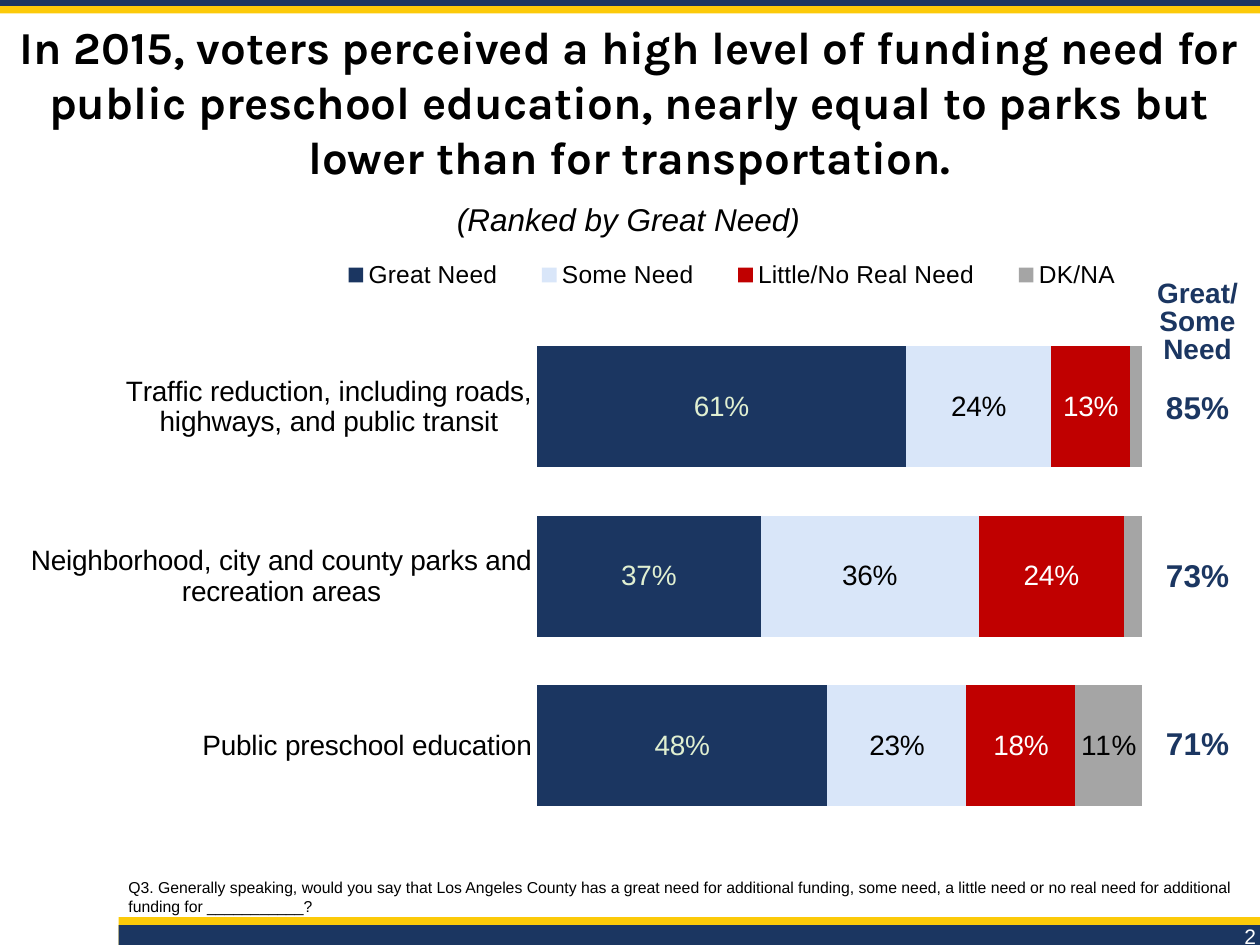
import pptx
import pptx.chart.data
import pptx.dml.color
import pptx.enum.chart
import pptx.enum.shapes
import pptx.enum.text
import pptx.oxml
import pptx.oxml.ns
import pptx.util

Cm, Pt = pptx.util.Cm, pptx.util.Pt
RGB = pptx.dml.color.RGBColor
Anchor = pptx.enum.text.MSO_ANCHOR
Align = pptx.enum.text.PP_ALIGN
XL = pptx.enum.chart

NAVY = RGB(0x1B, 0x36, 0x61)
GOLD = RGB(0xFC, 0xCA, 0x09)
PALE_BLUE = RGB(0xD9, 0xE6, 0xF9)
RED = RGB(0xC0, 0x00, 0x00)
GRAY = RGB(0xA5, 0xA5, 0xA5)
PALE_GREEN = RGB(0xE0, 0xEF, 0xD1)
BLACK = RGB(0, 0, 0)
WHITE = RGB(0xFF, 0xFF, 0xFF)

# Content
TITLE = ("In 2015, voters perceived a high level of funding need for public preschool "
         "education, nearly equal to parks but lower than for transportation.")
SUBTITLE = "(Ranked by Great Need)"
QUESTION = ("Q3. Generally speaking, would you say that Los Angeles County has a great need "
            "for additional funding, some need, a little need or no real need for additional "
            "funding for ___________?")
PAGE_NUMBER = "2"
CAUSES = ["Traffic reduction, including roads, highways, and public transit",
          "Neighborhood, city and county parks and recreation areas",
          "Public preschool education"]
ANSWERS = [  # name, shares, bar colour, label colour
    ("Great Need", (0.61, 0.37, 0.48), NAVY, PALE_GREEN),
    ("Some Need", (0.24, 0.36, 0.23), PALE_BLUE, BLACK),
    ("Little/No Real Need", (0.13, 0.24, 0.18), RED, WHITE),
    ("DK/NA", (0.02, 0.03, 0.11), GRAY, BLACK),
]
SMALLEST_LABEL = 0.05
TOTALS = [("Great/Some Need", 2.79), ("85%", 1.24), ("", 0.97),  # text, row height
          ("73%", 2.41), ("", 0.97), ("71%", 2.41)]
BANDS = [  # left, top, width, height, colour
    (2.39, 18.49, 23.01, 0.56, GOLD), (2.39, 18.65, 23.01, 0.4, NAVY),
    (0, 0, 25.4, 0.27, GOLD), (0, 0, 25.4, 0.12, NAVY),
]


def style(font, size, color, name="Arial", bold=False, italic=False):
    font.size, font.name, font.bold, font.italic = Pt(size), name, bold, italic
    font.color.rgb = color


def add_text(box, text, size, color, align, anchor, **look):
    frame = slide.shapes.add_textbox(*map(Cm, box)).text_frame
    frame.word_wrap = True
    frame.vertical_anchor = anchor
    paragraph = frame.paragraphs[0]
    paragraph.alignment = align
    run = paragraph.add_run()
    run.text = text
    style(run.font, size, color, **look)


def manual_layout(x, y, w, h, inner=False):
    target = '<c:layoutTarget val="inner"/>' if inner else ""
    return pptx.oxml.parse_xml(
        f'<c:layout {pptx.oxml.ns.nsdecls("c")}><c:manualLayout>{target}'
        '<c:xMode val="edge"/><c:yMode val="edge"/>'
        f'<c:x val="{x}"/><c:y val="{y}"/><c:w val="{w}"/><c:h val="{h}"/>'
        '</c:manualLayout></c:layout>')


def set_layout(parent, layout, position):
    for old in parent.findall(pptx.oxml.ns.qn("c:layout")):
        parent.remove(old)
    parent.insert(position, layout)


presentation = pptx.Presentation()
presentation.slide_width, presentation.slide_height = Cm(25.4), Cm(19.05)
slide = presentation.slides.add_slide(presentation.slide_layouts[6])

# Bands at top and bottom
for *box, color in BANDS:
    band = slide.shapes.add_shape(pptx.enum.shapes.MSO_SHAPE.RECTANGLE, *map(Cm, box))
    band.shadow.inherit = False
    band.fill.solid()
    band.fill.fore_color.rgb = color
    band.line.fill.background()

# Page number and survey question
add_text((23.06, 18.16, 2.51, 1.09), PAGE_NUMBER, 12, WHITE, Align.RIGHT, Anchor.BOTTOM)
add_text((2.34, 17.04, 23.06, 1.55), QUESTION, 9, BLACK, Align.LEFT, Anchor.BOTTOM)

# Stacked bar chart
chart_data = pptx.chart.data.CategoryChartData(number_format="0%")
chart_data.categories = CAUSES
for name, shares, _, _ in ANSWERS:
    chart_data.add_series(name, shares)
chart = slide.shapes.add_chart(XL.XL_CHART_TYPE.BAR_STACKED_100, Cm(0.1), Cm(5.11),
                               Cm(23.83), Cm(12.45), chart_data).chart
style(chart.font, 10, BLACK)
chart.has_title = False
plot = chart.plots[0]
plot.gap_width, plot.overlap, plot.vary_by_categories = 40, 100, False
set_layout(chart._chartSpace.chart.plotArea,
           manual_layout(0.45, 0.111, 0.512, 0.823, inner=True), 0)

for series, (_, shares, color, label_color) in zip(plot.series, ANSWERS):
    series.format.fill.solid()
    series.format.fill.fore_color.rgb = color
    labels = series.data_labels
    labels.show_value = True
    labels.number_format, labels.number_format_is_linked = "0%", False
    style(labels.font, 16, label_color)
    too_small = [i for i, share in enumerate(shares) if share < SMALLEST_LABEL]
    for position, index in enumerate(too_small):
        labels._element.insert(position, pptx.oxml.parse_xml(
            f'<c:dLbl {pptx.oxml.ns.nsdecls("c")}><c:idx val="{index}"/>'
            '<c:delete val="1"/></c:dLbl>'))

cause_axis = chart.category_axis
cause_axis.reverse_order = True
cause_axis.major_tick_mark = XL.XL_TICK_MARK.NONE
cause_axis.format.line.fill.background()
style(cause_axis.tick_labels.font, 16, BLACK)
share_axis = chart.value_axis
share_axis.minimum_scale, share_axis.maximum_scale, share_axis.major_unit = 0, 1, 0.2
share_axis.has_major_gridlines = False
share_axis.visible = False

chart.has_legend = True
chart.legend.position = XL.XL_LEGEND_POSITION.TOP
chart.legend.include_in_layout = False
style(chart.legend.font, 14, BLACK)
set_layout(chart.legend._element, manual_layout(0.26, 0.0, 0.71, 0.07), 1)

# Totals column
totals = slide.shapes.add_table(len(TOTALS), 1, Cm(23.29), Cm(4.57), Cm(1.7),
                                Cm(sum(height for _, height in TOTALS))).table
totals.first_row = totals.horz_banding = False
for index, (text, height) in enumerate(TOTALS):
    totals.rows[index].height = Cm(height)
    cell = totals.cell(index, 0)
    cell.fill.background()
    cell.vertical_anchor = Anchor.BOTTOM
    cell.margin_left = cell.margin_right = cell.margin_top = Cm(0.03)
    cell.margin_bottom = 0
    if text:
        paragraph = cell.text_frame.paragraphs[0]
        paragraph.alignment = Align.CENTER
        if index == 0:
            paragraph.line_spacing = Pt(16)
        run = paragraph.add_run()
        run.text = text
        style(run.font, 16 if index == 0 else 18, NAVY, bold=True)

# Title and subtitle
add_text((0, 0.2, 25.4, 3.68), TITLE, 26.1, BLACK, Align.CENTER, Anchor.MIDDLE,
         name="Karla", bold=True)
add_text((1.8, 3.91, 21.74, 1.02), SUBTITLE, 18, BLACK, Align.CENTER, Anchor.TOP, italic=True)

presentation.save("out.pptx")
